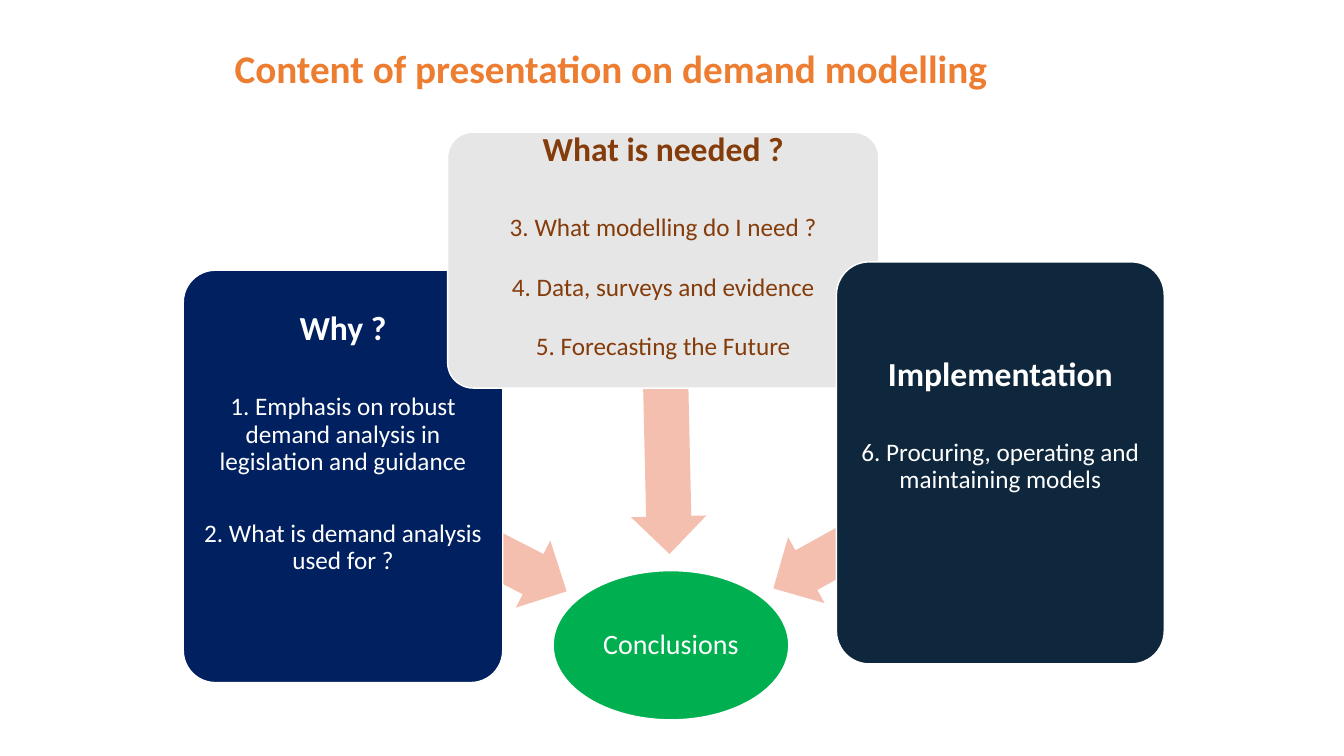
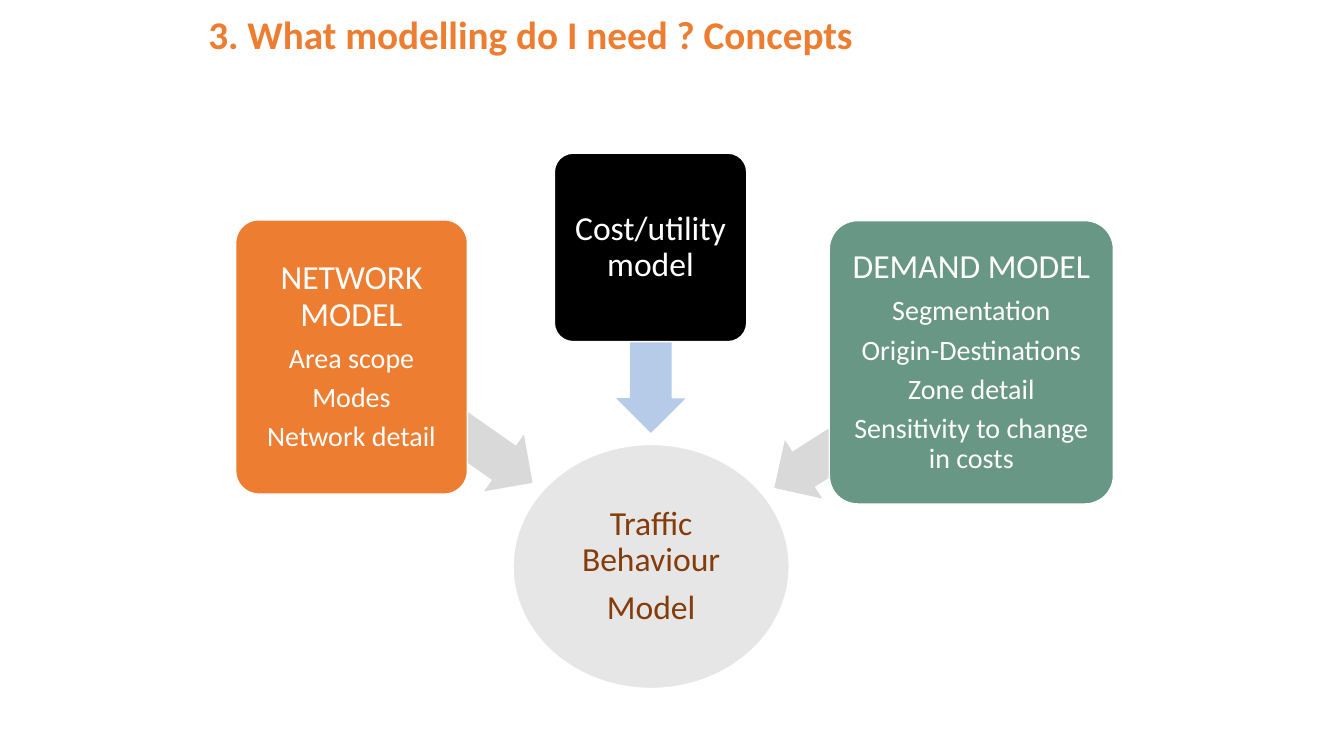
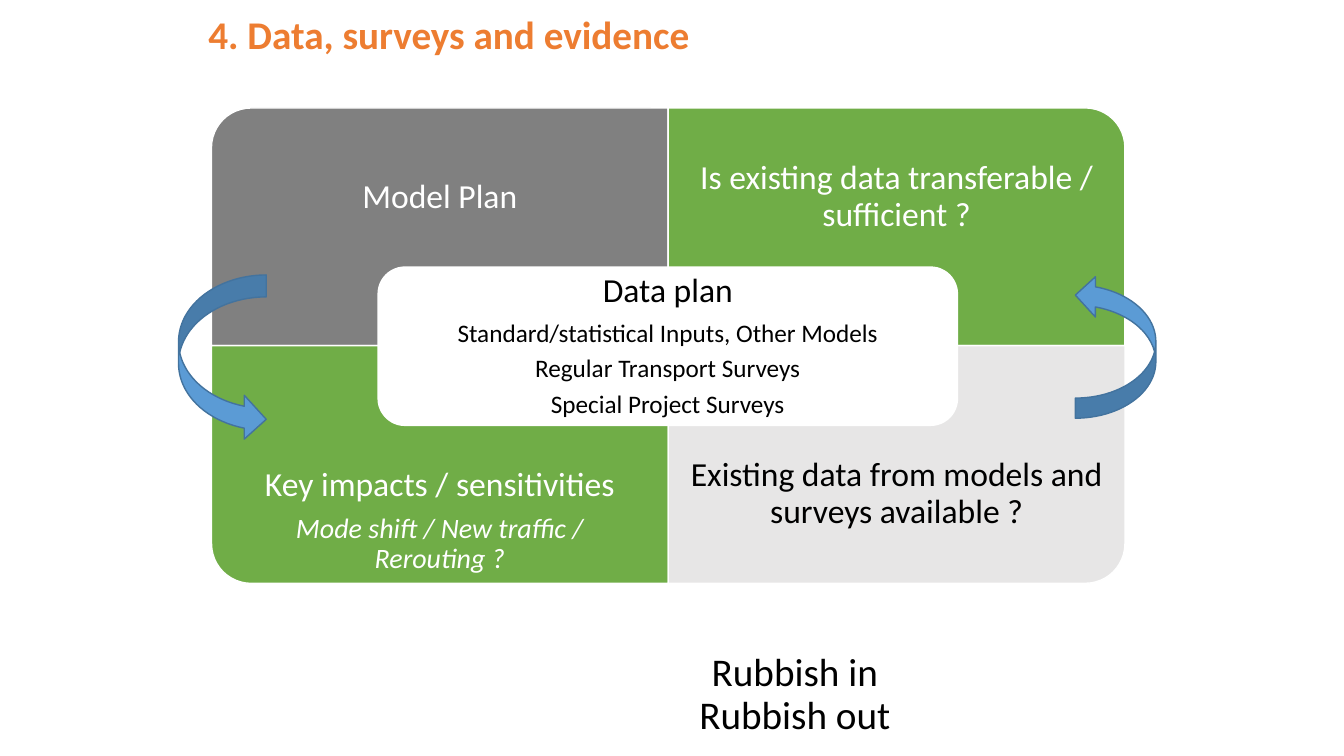
from pptx import Presentation
from pptx.dml.color import RGBColor
from pptx.enum.shapes import MSO_SHAPE as Form
from pptx.enum.text import MSO_ANCHOR as Anchor, PP_ALIGN as Align
from pptx.util import Cm, Pt

HUES = {
    "white": "FFFFFF", "black": "000000", "orange": "ED7D31", "brown": "843C0B",
    "pale": "E7E6E6", "gray": "808080", "silver": "D9D9D9", "navy": "002060",
    "night": "0F273D", "green": "00B050", "leaf": "70AD47", "sage": "689885",
    "peach": "F4BFAE", "mist": "B5CBE7", "blue": "5B9BD5", "steel": "43739E",
}
FONT = "Calibri"
HEAD, MID, BODY = 24, 20, 18


def hue(name):
    return RGBColor.from_string(HUES[name])


class Deck:
    def __init__(self):
        self.file = Presentation()
        self.file.slide_width, self.file.slide_height = Cm(33.87), Cm(19.05)
        self.slide = None

    def page(self):
        self.slide = self.file.slides.add_slide(self.file.slide_layouts[6])

    def label(self, shape, lines, ink, pad=(0.13, 0.13), lift=0,
              anchor=Anchor.MIDDLE, align=Align.CENTER, pitch=0.9):
        """Fill a shape with lines of (text, size, style, gap); lift raises the block."""
        frame = shape.text_frame
        frame.word_wrap = True
        frame.vertical_anchor = anchor
        frame.margin_left = frame.margin_right = Cm(pad[0])
        frame.margin_top = Cm(pad[1])
        frame.margin_bottom = Cm(pad[1] + 2 * lift)
        for n, (text, size, *rest) in enumerate(lines):
            style, gap = rest + ["", None][len(rest):]
            para = frame.paragraphs[0] if n == 0 else frame.add_paragraph()
            para.text = text
            para.alignment = align
            para.line_spacing = pitch
            para.space_after = Pt(round(size * 0.32, 1) if gap is None else gap)
            font = para.font
            font.name, font.size = FONT, Pt(size)
            font.bold, font.italic = style == "b", style == "i"
            font.color.rgb = hue(ink)

    def text(self, box, lines, ink, **opts):
        self.label(self.slide.shapes.add_textbox(*map(Cm, box)), lines, ink, **opts)

    def title(self, text, box=(5, 0.13, 21.34, 1.45), **opts):
        look = dict(pad=(0.25, 0.13), anchor=Anchor.TOP, align=Align.LEFT, pitch=1.0)
        self.text(box, [(text, 28, "b", 0)], "orange", **{**look, **opts})

    def shape(self, form, box, fill, edge="white", turn=0):
        shape = self.slide.shapes.add_shape(form, *map(Cm, box))
        shape.shadow.inherit = False
        shape.fill.solid()
        shape.fill.fore_color.rgb = hue(fill)
        if edge:
            shape.line.color.rgb = hue(edge)
            shape.line.width = Pt(1)
        else:
            shape.line.fill.background()
        shape.rotation = turn
        return shape

    def arrow(self, box, fill, turn):
        shape = self.shape(Form.LEFT_ARROW, box, fill, None, turn)
        shape.adjustments[0], shape.adjustments[1] = 0.6, 0.5

    def card(self, box, fill, lines, ink="white", bend=0.1, **opts):
        shape = self.shape(Form.ROUNDED_RECTANGLE, box, fill)
        shape.adjustments[0] = bend
        self.label(shape, lines, ink, **opts)

    def oval(self, box, fill, lines, ink):
        self.label(self.shape(Form.OVAL, box, fill), lines, ink, pad=(0.04, 0.04))

    def quad(self, col, row, fill, turn, lines, ink="white", drop=0):
        """One quarter of the grid, its round corner turned outward."""
        left, top, wide, high, deep = 5.33, 2.72, 11.51, 5.99, 4.5
        x, y = left + col * wide, top + row * high
        w, h = (high, wide) if turn % 180 else (wide, high)
        self.shape(Form.ROUND_1_RECTANGLE,
                   (x + (wide - w) / 2, y + (high - h) / 2, w, h), fill, turn=turn)
        self.text((x, y + row * (high - deep) + drop, wide, deep), lines, ink,
                  pad=(0.48, 0.48))

    def swirl(self, form, box, flip=False):
        shape = self.shape(form, box, "blue", "steel")
        if flip:
            shape.element.spPr.xfrm.set("flipV", "1")


def content(deck):
    deck.page()
    deck.title("Content of presentation on demand modelling", (4.24, 0, 22.3, 2.44),
               anchor=Anchor.BOTTOM, align=Align.CENTER, pitch=0.9)
    deck.oval((13.94, 14.38, 5.94, 3.76), "green", [("Conclusions", MID)], "white")
    deck.arrow((8.28, 12.5, 6.35, 1.9), "peach", 207.2)
    deck.card((4.62, 6.81, 8.05, 10.39), "navy", [
        ("Why ?", HEAD, "b", 33),
        ("1. Emphasis on robust demand analysis in legislation and guidance", BODY, "", 32),
        ("2. What is demand analysis used for ?", BODY)], lift=0.83)
    deck.arrow((13.08, 9.3, 7.42, 1.9), "peach", 268.7)
    deck.card((11.28, 3.33, 10.87, 6.45), "pale", [
        ("What is needed ?", HEAD, "b", 33),
        ("3. What modelling do I need ?", BODY, "", 23),
        ("4. Data, surveys and evidence", BODY, "", 23),
        ("5. Forecasting the Future", BODY)], "brown", lift=0.33)
    deck.arrow((19.08, 12.29, 6.55, 1.9), "peach", 331)
    deck.card((21.08, 6.6, 8.26, 10.13), "night", [
        ("Implementation", HEAD, "b", 33),
        ("6. Procuring, operating and maintaining models", BODY)], lift=0.93)


def concepts(deck):
    deck.page()
    deck.title("3. What modelling do I need ? Concepts")
    deck.oval((12.93, 11.2, 6.96, 6.15), "pale",
              [("Traffic Behaviour", HEAD), ("Model", HEAD)], "brown")
    deck.arrow((8.38, 9.7, 5.54, 1.75), "silver", 215)
    deck.card((5.94, 5.54, 5.84, 6.91), "orange", [
        ("NETWORK MODEL", HEAD), ("Area scope", MID), ("Modes", MID),
        ("Network detail", MID)])
    deck.arrow((14.07, 7.7, 4.67, 1.75), "mist", 270.1)
    deck.card((13.97, 3.86, 4.85, 4.75), "black", [("Cost/utility model", HEAD)])
    deck.arrow((19.05, 9.83, 5.92, 1.75), "silver", 327.5)
    deck.card((20.9, 5.56, 7.16, 7.14), "sage", [
        ("DEMAND MODEL", HEAD), ("Segmentation", MID), ("Origin-Destinations", MID),
        ("Zone detail", MID), ("Sensitivity to change in costs", MID)])


def data(deck):
    deck.page()
    deck.title("4. Data, surveys and evidence")
    deck.quad(0, 0, "gray", 270, [("Model Plan", HEAD)])
    deck.quad(1, 0, "leaf", 0, [("Is existing data transferable / sufficient ?", HEAD)])
    deck.quad(0, 1, "leaf", 180, [
        ("Key impacts / sensitivities", HEAD),
        ("Mode shift / New traffic / Rerouting ?", MID, "i")], drop=0.68)
    deck.quad(1, 1, "pale", 90,
              [("Existing data from models and surveys available ?", HEAD)], "black")
    deck.card((9.53, 6.73, 14.6, 3.99), "white", [
        ("Data plan", HEAD), ("Standard/statistical Inputs, Other Models", BODY),
        ("Regular Transport Surveys", BODY), ("Special Project Surveys", BODY)],
        "black", bend=0.17, pad=(0.25, 0.05))
    deck.text((14.33, 14.63, 11.4, 4.09),
              [("Rubbish in", 28, "", 0), ("Rubbish out", 28, "", 0)], "black",
              anchor=Anchor.BOTTOM)
    deck.swirl(Form.CURVED_LEFT_ARROW, (27.1, 6.93, 2.03, 3.61), flip=True)
    deck.swirl(Form.CURVED_RIGHT_ARROW, (4.5, 6.93, 2.21, 4.19))


def main():
    deck = Deck()
    for build in (content, concepts, data):
        build(deck)
    deck.file.save("out.pptx")


if __name__ == "__main__":
    main()
